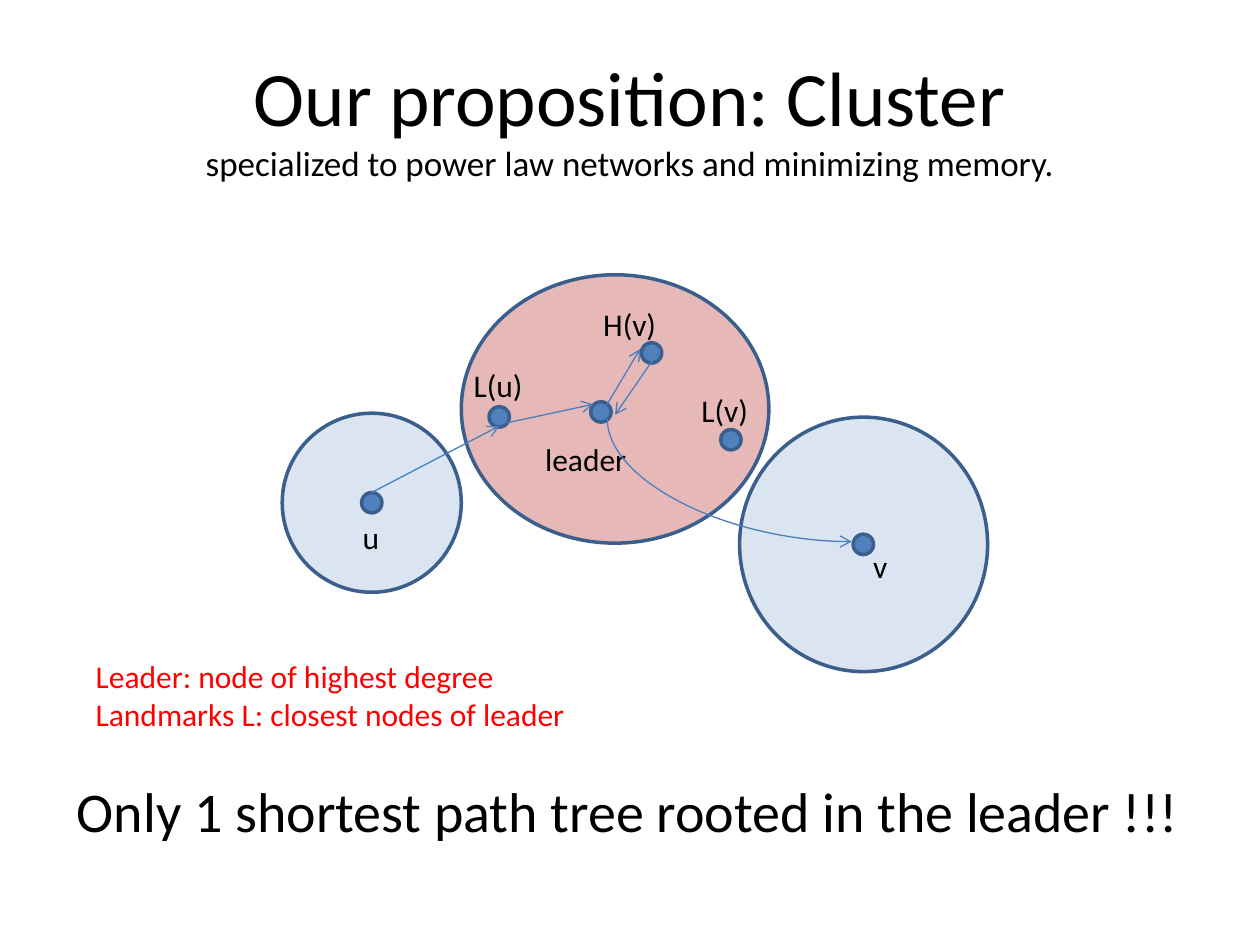
from lxml.etree import SubElement
from pptx import Presentation
from pptx.dml.color import RGBColor
from pptx.enum.shapes import MSO_CONNECTOR as Connector, MSO_SHAPE as Shape
from pptx.enum.text import MSO_ANCHOR as Anchor, PP_ALIGN as Align
from pptx.oxml.ns import qn
from pptx.util import Cm, Pt

COLORS = {
    "text": "000000",
    "note": "FF0000",
    "core": "E6B9B8",
    "cluster": "B9CDE5",
    "node": "4F81BD",
    "outline": "3A5F8C",
    "route": "4B7EBC",
}
NODE_SIZE = 0.41
LABEL_HEIGHT = 1.02


class ClusterSlide:
    """Draws the elements of the cluster diagram in one style on one slide."""

    def __init__(self, slide, font="Calibri"):
        self.slide = slide
        self.font = font

    def color(self, name):
        return RGBColor.from_string(COLORS[name])

    def text(self, box, lines, sizes=(18,), color="text", align=Align.LEFT,
             anchor=Anchor.TOP, wrap=True):
        shape = self.slide.shapes.add_textbox(*map(Cm, box))
        frame = shape.text_frame
        frame.word_wrap = wrap
        frame.vertical_anchor = anchor
        frame.text = lines
        for paragraph in frame.paragraphs:
            paragraph.alignment = align
            for run, size in zip(paragraph.runs, sizes):
                run.font.name = self.font
                run.font.size = Pt(size)
                run.font.color.rgb = self.color(color)

    def ellipse(self, box, color, opacity=100):
        shape = self.slide.shapes.add_shape(Shape.OVAL, *map(Cm, box))
        shape.shadow.inherit = False
        shape.fill.solid()
        shape.fill.fore_color.rgb = self.color(color)
        shape.line.color.rgb = self.color("outline")
        shape.line.width = Pt(2)
        if opacity < 100:
            fill = shape._element.spPr.find(qn("a:solidFill"))
            SubElement(fill[0], qn("a:alpha"), val=str(opacity * 1000))

    def node(self, left, top):
        self.ellipse((left, top, NODE_SIZE, NODE_SIZE), "node")

    def arrow(self, ends, kind=Connector.STRAIGHT):
        connector = self.slide.shapes.add_connector(kind, *map(Cm, ends))
        connector.line.color.rgb = self.color("route")
        connector.line.width = Pt(0.75)
        properties = connector._element.spPr
        SubElement(properties.find(qn("a:ln")), qn("a:tailEnd"), type="arrow")
        SubElement(properties, qn("a:effectLst"))
        return connector

    def quarter_curve(self, ends, degrees):
        connector = self.arrow(ends, Connector.CURVE)
        properties = connector._element.spPr
        properties.find(qn("a:prstGeom")).set("prst", "curvedConnector2")
        properties.find(qn("a:xfrm")).set("rot", str(degrees * 60000))


def main():
    presentation = Presentation()
    presentation.slide_width, presentation.slide_height = Cm(25.4), Cm(19.05)
    diagram = ClusterSlide(presentation.slides.add_slide(presentation.slide_layouts[6]))

    diagram.text((1.3, 15.52, 22.83, 1.5),
                 "Only 1 shortest path tree rooted in the leader !!!", (32,))
    diagram.text((1.27, 0.76, 22.86, 3.18),
                 "Our proposition: Cluster\vspecialized to power law networks and minimizing memory.",
                 (44, 20), align=Align.CENTER, anchor=Anchor.MIDDLE)

    diagram.ellipse((9.3, 5.54, 6.2, 5.41), "core")
    diagram.ellipse((5.69, 8.33, 3.61, 3.61), "cluster", 50)
    diagram.ellipse((14.91, 8.41, 5, 5.13), "cluster", 50)

    for left, top in ((7.29, 9.93), (9.86, 8.2), (14.53, 8.66),
                      (17.2, 10.77), (11.91, 8.1), (12.93, 6.91)):
        diagram.node(left, top)

    for name, left, top, width in (
        ("u", 7.06, 10.31, 0.86),
        ("v", 17.35, 10.9, 0.79),
        ("L(u)", 9.3, 7.26, 1.85),
        ("L(v)", 13.89, 7.75, 1.85),
        ("leader", 10.74, 8.74, 2.39),
        ("H(v)", 11.91, 6.02, 2.01),
    ):
        diagram.text((left, top, width, LABEL_HEIGHT), name, wrap=name != "u")

    diagram.text((1.68, 13.13, 14.2, 1.8),
                 "Leader: node of highest degree\nLandmarks L: closest nodes of leader",
                 color="note")

    diagram.arrow((7.49, 9.93, 10.06, 8.59))
    diagram.quarter_curve((15.95, 7.21, 13.46, 12.14), 270)
    for ends in ((10.19, 8.53, 11.96, 8.15), (12.24, 8.15, 12.9, 7.04),
                 (13.31, 7.04, 12.4, 8.36)):
        diagram.arrow(ends)

    presentation.save("out.pptx")


if __name__ == "__main__":
    main()
